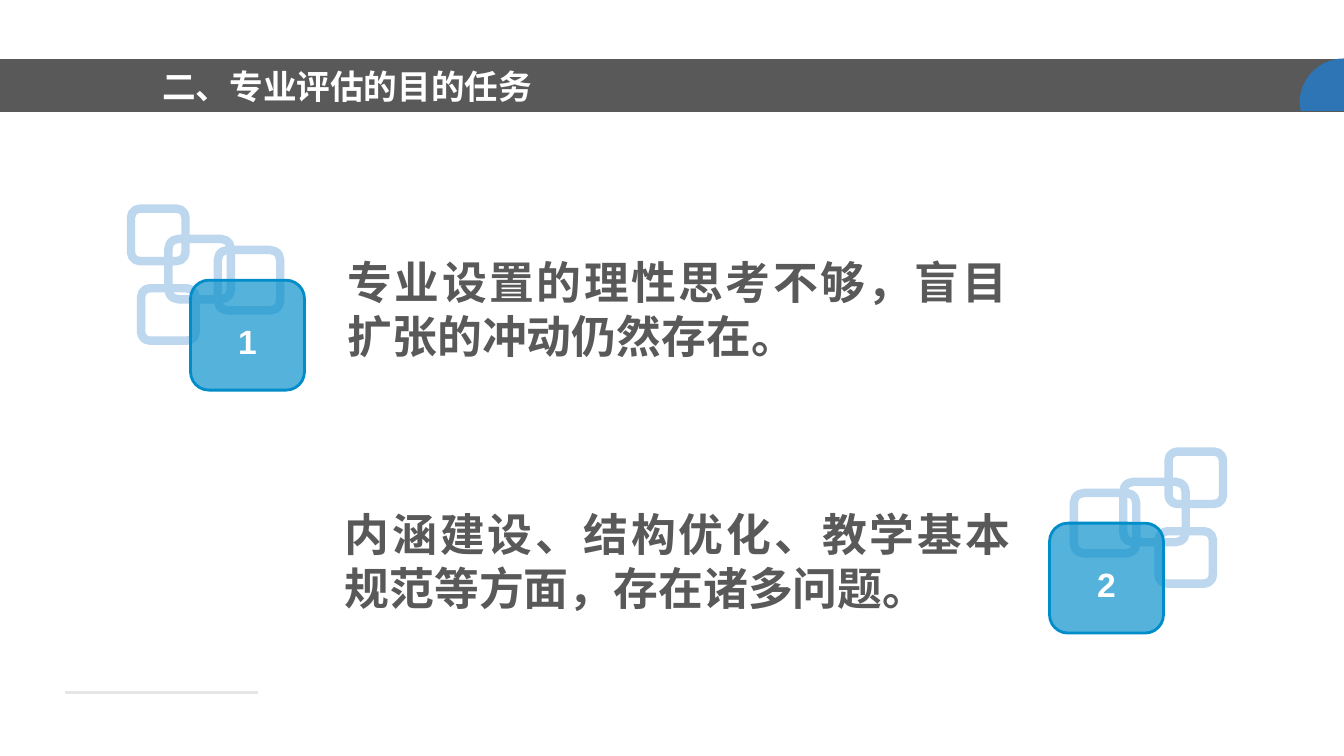
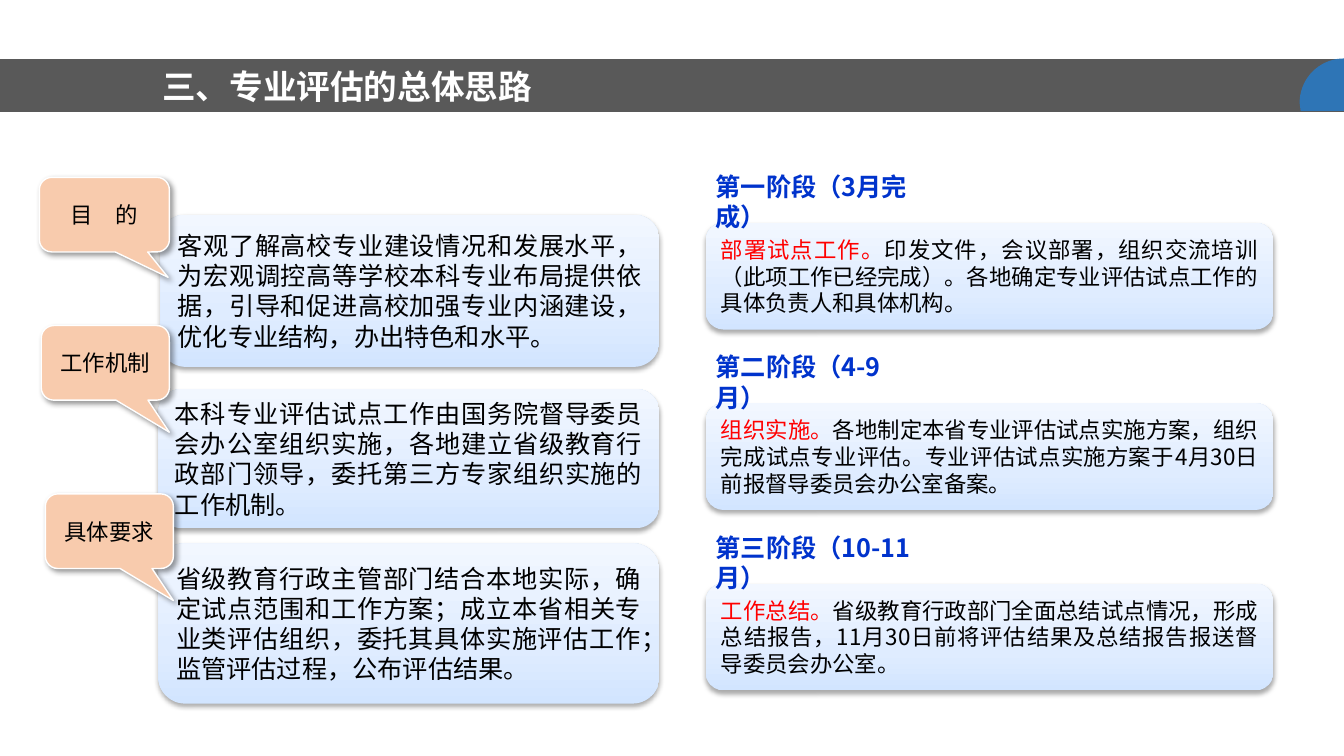
import math
from dataclasses import dataclass

import lxml.etree
import pptx
import pptx.dml.color
import pptx.enum.shapes
import pptx.enum.text
import pptx.oxml.ns
import pptx.util

Inches = pptx.util.Inches
Pt = pptx.util.Pt
RGBColor = pptx.dml.color.RGBColor
SHAPE = pptx.enum.shapes.MSO_SHAPE
ALIGN = pptx.enum.text.PP_ALIGN
ANCHOR = pptx.enum.text.MSO_ANCHOR
qn = pptx.oxml.ns.qn

WHITE = RGBColor(0xFF, 0xFF, 0xFF)
BLACK = RGBColor(0, 0, 0)
GREY = RGBColor(0x59, 0x59, 0x59)
PALE_GREY = RGBColor(0xE7, 0xE6, 0xE6)
CORNER_BLUE = RGBColor(0x2E, 0x75, 0xB6)
LINK_BLUE = RGBColor(0xBD, 0xD7, 0xEE)
BADGE_BLUE = RGBColor(0x00, 0x8D, 0xCA)
STAGE_BLUE = RGBColor(0x00, 0x33, 0xCC)
RED = RGBColor(0xFF, 0, 0)
PEACH = RGBColor(0xF8, 0xCB, 0xAD)
PANEL_STOPS = (
    (0, RGBColor(0xD2, 0xE5, 0xFF)),
    (35, RGBColor(0xDF, 0xEC, 0xFF)),
    (100, RGBColor(0xF2, 0xF7, 0xFF)),
)
LATIN = "Arial"
CJK = "Noto Sans CJK SC"


@dataclass(frozen=True)
class Box:
    left: float
    top: float
    width: float
    height: float


@dataclass(frozen=True)
class Style:
    size: int
    color: RGBColor
    bold: bool = False
    font: str = CJK


@dataclass(frozen=True)
class Shadow:
    alpha: int
    blur: float
    dist: float
    angle: int


@dataclass(frozen=True)
class Point:
    number: str
    badge_left: float
    badge_top: float
    mirrored: bool
    box: Box
    text: str


@dataclass(frozen=True)
class Topic:
    label: str
    callout: Box
    tail: tuple[float, float]
    panel: Box
    text: str


@dataclass(frozen=True)
class Stage:
    label: str
    lead: str
    text: str


TITLE = Style(24, WHITE, True, LATIN)
POINT = Style(32, GREY, True)
TOPIC = Style(18, BLACK)
CALLOUT = Style(16, BLACK)
STAGE_LABEL = Style(18, STAGE_BLUE, True)
STAGE_LEAD = Style(16, RED)
STAGE_TEXT = Style(16, BLACK)
PANEL_SHADOW = Shadow(32, 3.5, 2.2, 90)
CALLOUT_SHADOW = Shadow(40, 4, 3, 45)

CHAIN_WIDTH = 1.72
CHAIN_LINKS = (
    Box(0, 0, 0.54, 0.52),
    Box(0.37, 0.3, 0.62, 0.6),
    Box(0.86, 0.41, 0.62, 0.6),
    Box(0.1, 0.79, 0.54, 0.52),
)
CHAIN_BADGE = Box(0.59, 0.71, 1.13, 1.09)

POINTS = (
    Point("1", 1.3, 2.07, False, Box(3.35, 2.48, 6.74, 1.18),
          "专业设置的理性思考不够，盲目扩张的冲动仍然存在。"),
    Point("2", 10.41, 4.48, True, Box(3.32, 4.98, 6.8, 1.18),
          "内涵建设、结构优化、教学基本规范等方面，存在诸多问题。"),
)
TOPICS = (
    Topic("目　的", Box(0.39, 1.76, 1.29, 0.74), (0.49, 0.84),
          Box(1.59, 2.13, 4.95, 1.51),
          "客观了解高校专业建设情况和发展水平，为宏观调控高等学校本科专业布局提供依据，"
          "引导和促进高校加强专业内涵建设，优化专业结构，办出特色和水平。"),
    Topic("工作机制", Box(0.41, 3.23, 1.27, 0.74), (0.5, 0.93),
          Box(1.57, 3.86, 4.97, 1.38),
          "本科专业评估试点工作由国务院督导委员会办公室组织实施，各地建立省级教育行政部门领导，"
          "委托第三方专家组织实施的工作机制。"),
    Topic("具体要求", Box(0.45, 4.9, 1.27, 0.74), (0.5, 0.93),
          Box(1.57, 5.39, 4.97, 1.59),
          "省级教育行政主管部门结合本地实际，确定试点范围和工作方案；成立本省相关专业类评估组织，"
          "委托其具体实施评估工作；监管评估过程，公布评估结果。"),
)
STAGES = (
    Stage("第一阶段（3月完成）", "部署试点工作。",
          "印发文件，会议部署，组织交流培训（此项工作已经完成）。"
          "各地确定专业评估试点工作的具体负责人和具体机构。"),
    Stage("第二阶段（4-9月）", "组织实施。",
          "各地制定本省专业评估试点实施方案，组织完成试点专业评估。"
          "专业评估试点实施方案于4月30日前报督导委员会办公室备案。"),
    Stage("第三阶段（10-11月）", "工作总结。",
          "省级教育行政部门全面总结试点情况，形成总结报告，"
          "11月30日前将评估结果及总结报告报送督导委员会办公室。"),
)
STAGE_TOP, STAGE_STEP = 1.65, 1.79


def place(box: Box) -> tuple:
    return Inches(box.left), Inches(box.top), Inches(box.width), Inches(box.height)


def write(sp, runs, align=ALIGN.LEFT, anchor=ANCHOR.MIDDLE, spacing=None) -> None:
    tf = sp.text_frame
    tf.word_wrap = True
    tf.vertical_anchor = anchor
    p = tf.paragraphs[0]
    p.alignment = align
    if spacing:
        p.line_spacing = spacing
    for text, style in runs:
        r = p.add_run()
        r.text = text
        r.font.size = Pt(style.size)
        r.font.bold = style.bold
        r.font.name = style.font
        r.font.color.rgb = style.color
        rpr = r._r.get_or_add_rPr()
        rpr.set("lang", "zh-CN")
        lxml.etree.SubElement(rpr, qn("a:ea")).set("typeface", CJK)


def add_text(s, box: Box, text: str, style: Style, align=ALIGN.LEFT) -> None:
    write(s.shapes.add_textbox(*place(box)), [(text, style)], align, ANCHOR.TOP)


def add_alpha(color, percent: int) -> None:
    lxml.etree.SubElement(color, qn("a:alpha")).set("val", str(percent * 1000))


def paint(sp, fill=None, line=None, weight: float = 1) -> None:
    sp.shadow.inherit = False
    if fill is None:
        sp.fill.background()
    else:
        sp.fill.solid()
        sp.fill.fore_color.rgb = fill
    if line is None:
        sp.line.fill.background()
    else:
        sp.line.color.rgb = line
        sp.line.width = Pt(weight)


def add_shape(s, kind, box: Box, fill=None, line=None, weight: float = 1):
    sp = s.shapes.add_shape(kind, *place(box))
    paint(sp, fill, line, weight)
    return sp


def cast_shadow(sp, shadow: Shadow) -> None:
    effects = sp.element.spPr.find(qn("a:effectLst"))
    outer = lxml.etree.SubElement(effects, qn("a:outerShdw"))
    outer.set("blurRad", str(Pt(shadow.blur)))
    outer.set("dist", str(Pt(shadow.dist)))
    outer.set("dir", str(shadow.angle * 60000))
    outer.set("rotWithShape", "0")
    color = lxml.etree.SubElement(outer, qn("a:srgbClr"))
    color.set("val", str(BLACK))
    add_alpha(color, shadow.alpha)


def add_panel(s, box: Box, runs) -> None:
    sp = add_shape(s, SHAPE.ROUNDED_RECTANGLE, box)
    sp.fill.gradient()
    gradient = sp.element.spPr.find(qn("a:gradFill"))
    stops = gradient.find(qn("a:gsLst"))
    for stop in list(stops):
        stops.remove(stop)
    for position, rgb in PANEL_STOPS:
        stop = lxml.etree.SubElement(stops, qn("a:gs"))
        stop.set("pos", str(position * 1000))
        lxml.etree.SubElement(stop, qn("a:srgbClr")).set("val", str(rgb))
    gradient.find(qn("a:lin")).set("ang", str(270 * 60000))
    cast_shadow(sp, PANEL_SHADOW)
    write(sp, runs, ALIGN.JUSTIFY)


def add_callout(s, topic: Topic) -> None:
    sp = add_shape(s, SHAPE.ROUNDED_RECTANGULAR_CALLOUT, topic.callout, PEACH, WHITE)
    sp.adjustments[0], sp.adjustments[1] = topic.tail
    cast_shadow(sp, CALLOUT_SHADOW)
    write(sp, [(topic.label, CALLOUT)], ALIGN.CENTER)


def add_corner(s) -> None:
    right, middle, radius, bottom = 13.33, 1.02, 0.44, 1.1
    arc = [
        (right + radius * math.cos(math.radians(a)),
         middle - radius * math.sin(math.radians(a)))
        for a in range(180, 89, -5)
    ]
    points = [(right - radius + 0.01, bottom), *arc]
    builder = s.shapes.build_freeform(Inches(right), Inches(bottom))
    builder.add_line_segments([(Inches(x), Inches(y)) for x, y in points])
    paint(builder.convert_to_shape(), CORNER_BLUE)


def add_slide(prs, title: str):
    s = prs.slides.add_slide(prs.slide_layouts[5])
    add_shape(s, SHAPE.FLOWCHART_PROCESS, Box(0, 0.59, 13.33, 0.52), GREY)
    sp = s.shapes.title
    sp.left, sp.top, sp.width, sp.height = place(Box(1.51, 0.6, 5.5, 0.5))
    sp.element.getparent().append(sp.element)
    sp.text_frame.auto_size = pptx.enum.text.MSO_AUTO_SIZE.NONE
    write(sp, [(title, TITLE)])
    add_corner(s)
    return s


def add_chain(s, point: Point) -> None:
    def locate(part: Box) -> Box:
        x = CHAIN_WIDTH - part.left - part.width if point.mirrored else part.left
        return Box(point.badge_left + x, point.badge_top + part.top,
                   part.width, part.height)

    for link in CHAIN_LINKS:
        add_shape(s, SHAPE.ROUNDED_RECTANGLE, locate(link), None, LINK_BLUE, 6)
    badge = add_shape(s, SHAPE.ROUNDED_RECTANGLE, locate(CHAIN_BADGE),
                      BADGE_BLUE, BADGE_BLUE, 2)
    add_alpha(badge.element.spPr.find(qn("a:solidFill"))[0], 67)
    write(badge, [(point.number, TITLE)], ALIGN.CENTER, spacing=1.3)


def build_purpose(prs) -> None:
    s = add_slide(prs, "二、专业评估的目的任务")
    for point in POINTS:
        add_text(s, point.box, point.text, POINT, ALIGN.JUSTIFY)
        add_chain(s, point)
    rule = s.shapes.add_connector(
        pptx.enum.shapes.MSO_CONNECTOR.STRAIGHT,
        Inches(0.64), Inches(6.87), Inches(2.56), Inches(6.87))
    rule.line.color.rgb = PALE_GREY
    rule.line.width = Pt(1.5)
    lxml.etree.SubElement(rule.element.spPr, qn("a:effectLst"))


def build_approach(prs) -> None:
    s = add_slide(prs, "三、专业评估的总体思路")
    for i, stage in enumerate(STAGES):
        top = STAGE_TOP + i * STAGE_STEP
        add_panel(s, Box(7, top + 0.56, 5.63, 1.06),
                  [(stage.lead, STAGE_LEAD), (stage.text, STAGE_TEXT)])
        add_text(s, Box(7, top, 2.3, 0.4), stage.label, STAGE_LABEL)
    for topic in TOPICS:
        add_panel(s, topic.panel, [(topic.text, TOPIC)])
    for topic in TOPICS:
        add_callout(s, topic)


def main() -> None:
    prs = pptx.Presentation()
    prs.slide_width, prs.slide_height = Inches(13.33), Inches(7.5)
    build_purpose(prs)
    build_approach(prs)
    prs.save("out.pptx")


if __name__ == "__main__":
    main()
